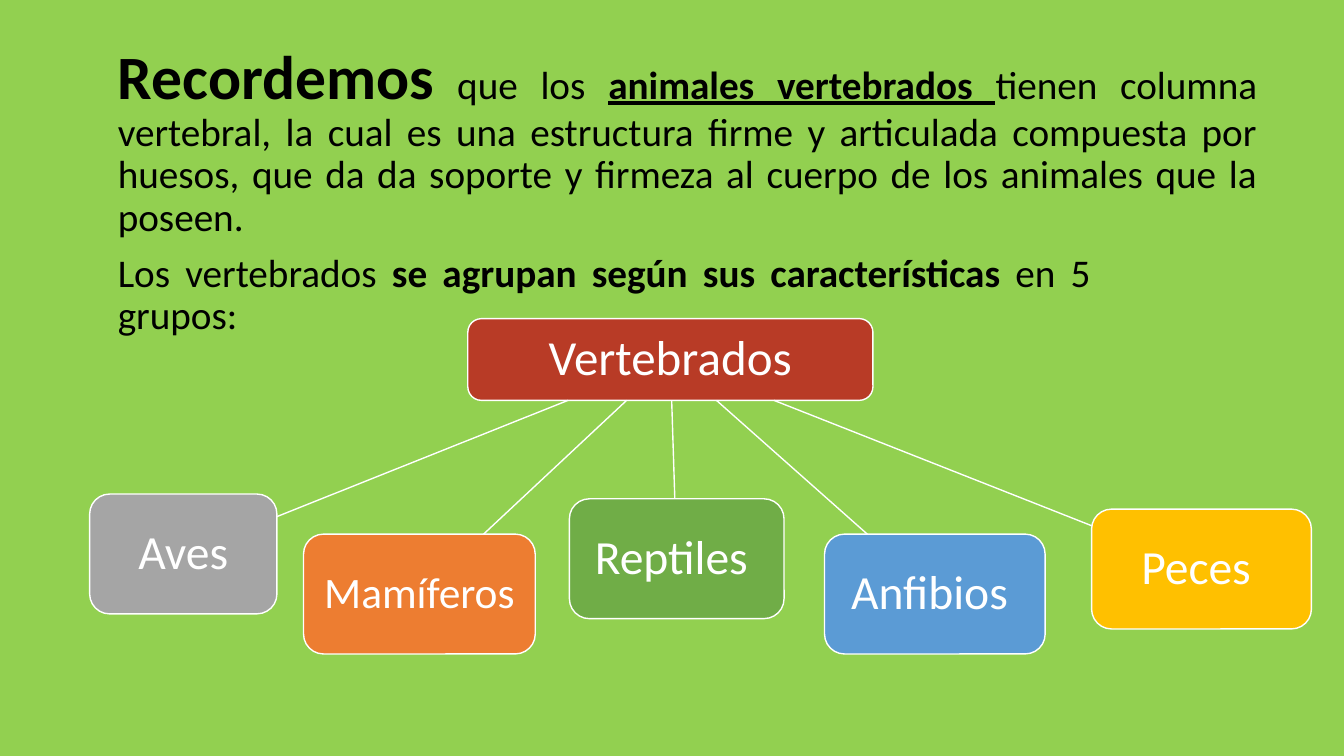
from pptx import Presentation
from pptx import util as u
from pptx.dml.color import RGBColor
from pptx.enum import shapes, text
from pptx.oxml.ns import qn
from lxml import etree

Cm, Pt = u.Cm, u.Pt
WHITE, BLACK = "FFFFFF", "000000"

INTRO = [
    [("Recordemos", dict(size=44, bold=True)),
     (" que los ", {}),
     ("animales vertebrados ", dict(bold=True, under=True)),
     ("tienen columna vertebral, la cual es una estructura firme y articulada "
      "compuesta por huesos, que da da soporte y firmeza al cuerpo de los "
      "animales que la poseen.", {})],
    [("Los vertebrados ", {}),
     ("se agrupan según sus características ", dict(bold=True)),
     ("en 5 grupos:", {})],
]

# Label, fill, text size, (left, top, width, height) in cm within the tree
ROOT = (" Vertebrados ", "B83B26", 35, (9.53, 0, 10.21, 2.06))
GROUPS = [
    ("Aves", "A5A5A5", 34, (0, 4.42, 4.72, 3.02)),
    ("Mamíferos", "ED7D31", 31, (5.39, 5.43, 5.84, 3.02)),
    ("Reptiles ", "70AD47", 34, (12.09, 4.54, 5.41, 3.02)),
    ("Anfibios ", "5B9BD5", 34, (18.52, 5.43, 5.56, 3.02)),
    ("Peces ", "FFC000", 34, (25.25, 4.8, 5.54, 3.02)),
]


def color(code):
    return RGBColor.from_string(code)


def write(para, words, size=28, ink=BLACK, bold=False, under=False):
    run = para.add_run()
    run.text = words
    font = run.font
    font.name, font.size = "Calibri", Pt(size)
    font.bold, font.underline = bold, under
    font.color.rgb = color(ink)


def add_intro(slide, left, top, width, height):
    box = slide.shapes.add_textbox(Cm(left), Cm(top), Cm(width), Cm(height))
    frame = box.text_frame
    frame.word_wrap = True
    for i, runs in enumerate(INTRO):
        para = frame.add_paragraph() if i else frame.paragraphs[0]
        para.alignment = text.PP_ALIGN.JUSTIFY
        para.line_spacing = 0.9
        para.space_before = Pt(10 if i else 0)
        for words, style in runs:
            write(para, words, **style)
    # Right indent that keeps the last word on its own line
    para._p.get_or_add_pPr().set("marR", str(Cm(4.2)))


def add_node(slide, label, fill, size, box):
    node = slide.shapes.add_shape(
        shapes.MSO_SHAPE.ROUNDED_RECTANGLE, *map(Cm, box))
    node.shadow.inherit = False
    node.fill.solid()
    node.fill.fore_color.rgb = color(fill)
    node.line.color.rgb = color(WHITE)
    node.line.width = Pt(1)
    frame = node.text_frame
    frame.word_wrap = True
    frame.vertical_anchor = text.MSO_ANCHOR.MIDDLE
    frame.margin_left = frame.margin_right = Cm(0.35)
    frame.margin_top = frame.margin_bottom = Cm(0.35)
    para = frame.paragraphs[0]
    para.alignment = text.PP_ALIGN.CENTER
    para.line_spacing = 0.9
    write(para, label, size=size, ink=WHITE)


def edge(box, goal):
    """Point where the line between two box centres leaves the first box."""
    (x, y), (gx, gy) = [(b[0] + b[2] / 2, b[1] + b[3] / 2)
                        for b in (box, goal)]
    dx, dy = gx - x, gy - y
    part = 1 / max(abs(dx) / (box[2] / 2), abs(dy) / (box[3] / 2))
    return Cm(x + part * dx), Cm(y + part * dy)


def add_link(slide, start, end):
    link = slide.shapes.add_connector(
        shapes.MSO_CONNECTOR.STRAIGHT, *edge(start, end), *edge(end, start))
    link.line.color.rgb = color(WHITE)
    link.line.width = Pt(1)
    etree.SubElement(link._element.spPr, qn("a:effectLst"))


def add_tree(slide, left, top):
    def place(box):
        return (left + box[0], top + box[1], *box[2:])

    root = place(ROOT[3])
    add_node(slide, *ROOT[:3], root)
    for label, fill, size, box in GROUPS:
        spot = place(box)
        add_link(slide, root, spot)
        add_node(slide, label, fill, size, spot)


def main():
    deck = Presentation()
    deck.slide_width, deck.slide_height = Cm(33.87), Cm(19.05)
    slide = deck.slides.add_slide(deck.slide_layouts[6])

    # Background
    back = slide.background.fill
    back.solid()
    back.fore_color.rgb = color("92D050")

    # Introduction above, tree of groups below
    add_intro(slide, 2.72, 1.04, 29.21, 8)
    add_tree(slide, 2.26, 8.03)
    deck.save("out.pptx")


if __name__ == "__main__":
    main()
